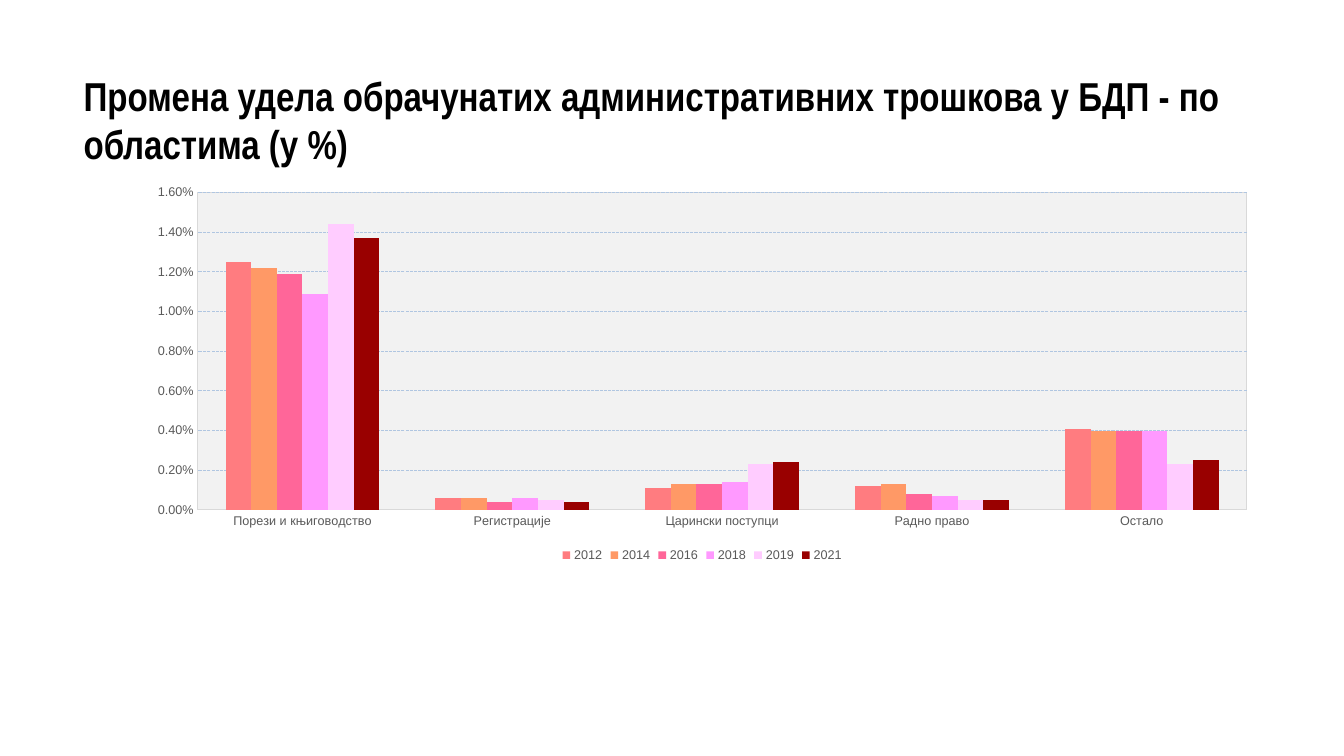
"""Builds a slide charting administrative costs as a share of GDP by area."""
import pptx
import pptx.chart.data
import pptx.dml.color
import pptx.enum.chart
import pptx.enum.dml
import pptx.enum.text
import pptx.oxml
import pptx.oxml.ns
import pptx.util
from pptx.util import Inches

RGBColor = pptx.dml.color.RGBColor
BLACK = RGBColor(0x00, 0x00, 0x00)
LABEL_GREY = RGBColor(0x59, 0x59, 0x59)
AXIS_GREY = RGBColor(0xD9, 0xD9, 0xD9)
GRID_BLUE = RGBColor(0xB0, 0xC6, 0xE1)
PLOT_GREY = RGBColor(0xF2, 0xF2, 0xF2)

AREAS = ["Порези и књиговодство", "Регистрације", "Царински поступци", "Радно право", "Остало"]
YEARS = [
    ("2012", RGBColor(0xFF, 0x7C, 0x80), (0.0125, 0.0006, 0.0011, 0.0012, 0.0041)),
    ("2014", RGBColor(0xFF, 0x99, 0x66), (0.0122, 0.0006, 0.0013, 0.0013, 0.004)),
    ("2016", RGBColor(0xFF, 0x66, 0x99), (0.0119, 0.0004, 0.0013, 0.0008, 0.004)),
    ("2018", RGBColor(0xFF, 0x99, 0xFF), (0.0109, 0.0006, 0.0014, 0.0007, 0.004)),
    ("2019", RGBColor(0xFF, 0xCC, 0xFF), (0.0144, 0.0005, 0.0023, 0.0005, 0.0023)),
    ("2021", RGBColor(0x99, 0x00, 0x00), (0.0137, 0.0004, 0.0024, 0.0005, 0.0025)),
]


def style_font(font, name, size, color):
    font.name = name
    font.size = pptx.util.Pt(size)
    font.color.rgb = color


presentation = pptx.Presentation()
presentation.slide_width = Inches(13.33)
presentation.slide_height = Inches(7.5)
slide = presentation.slides.add_slide(presentation.slide_layouts[6])

heading = slide.shapes.add_textbox(Inches(0.83), Inches(0.72), Inches(11.94), Inches(0.93)).text_frame
heading.word_wrap = True
heading.vertical_anchor = pptx.enum.text.MSO_ANCHOR.MIDDLE
heading.margin_left = heading.margin_right = heading.margin_top = heading.margin_bottom = 0
heading_run = heading.paragraphs[0].add_run()
heading_run.text = "Промена удела обрачунатих административних трошкова у БДП - по областима (у %)"
style_font(heading_run.font, "Arial Narrow", 28.8, BLACK)
heading_run.font.bold = True

cost_shares = pptx.chart.data.CategoryChartData(number_format="0.00%")
cost_shares.categories = AREAS
for year, color, shares in YEARS:
    cost_shares.add_series(year, shares)

cost_chart = slide.shapes.add_chart(
    pptx.enum.chart.XL_CHART_TYPE.COLUMN_CLUSTERED,
    Inches(1.34), Inches(1.76), Inches(11.25), Inches(3.86), cost_shares,
).chart
cost_chart.has_title = False
style_font(cost_chart.font, "Arial", 10, BLACK)

columns = cost_chart.plots[0]
columns.gap_width = 219
columns.overlap = 0
columns.vary_by_categories = False
for column, (year, color, shares) in zip(columns.series, YEARS):
    column.format.fill.solid()
    column.format.fill.fore_color.rgb = color

area_axis, share_axis = cost_chart.category_axis, cost_chart.value_axis
for axis in (area_axis, share_axis):
    axis.major_tick_mark = pptx.enum.chart.XL_TICK_MARK.NONE
    axis.minor_tick_mark = pptx.enum.chart.XL_TICK_MARK.NONE
    style_font(axis.tick_labels.font, "Arial", 9, LABEL_GREY)
area_axis.format.line.color.rgb = AXIS_GREY
area_axis.format.line.width = pptx.util.Pt(0.75)

share_axis.minimum_scale = 0
share_axis.maximum_scale = 0.016
share_axis.major_unit = 0.002
share_axis.tick_labels.number_format = "0.00%"
share_axis.tick_labels.number_format_is_linked = False
share_axis.format.line.fill.background()
share_axis.has_major_gridlines = True
gridline = share_axis.major_gridlines.format.line
gridline.color.rgb = GRID_BLUE
gridline.width = pptx.util.Pt(0.75)
gridline.dash_style = pptx.enum.dml.MSO_LINE.SQUARE_DOT

cost_chart.has_legend = True
cost_chart.legend.position = pptx.enum.chart.XL_LEGEND_POSITION.BOTTOM
cost_chart.legend.include_in_layout = False
style_font(cost_chart.legend.font, "Arial", 9, LABEL_GREY)

plot_area = cost_chart.element.chart.plotArea
for old_layout in plot_area.findall(pptx.oxml.ns.qn("c:layout")):
    plot_area.remove(old_layout)
plot_area.insert(0, pptx.oxml.parse_xml(
    f'<c:layout {pptx.oxml.ns.nsdecls("c")}><c:manualLayout><c:layoutTarget val="inner"/>'
    '<c:xMode val="edge"/><c:yMode val="edge"/>'
    '<c:x val="0.055"/><c:y val="0.039"/><c:w val="0.925"/><c:h val="0.816"/>'
    '</c:manualLayout></c:layout>'))
plot_area.append(pptx.oxml.parse_xml(
    f'<c:spPr {pptx.oxml.ns.nsdecls("c", "a")}>'
    f'<a:solidFill><a:srgbClr val="{PLOT_GREY}"/></a:solidFill>'
    f'<a:ln w="9525"><a:solidFill><a:srgbClr val="{AXIS_GREY}"/></a:solidFill></a:ln></c:spPr>'))

presentation.save("out.pptx")
